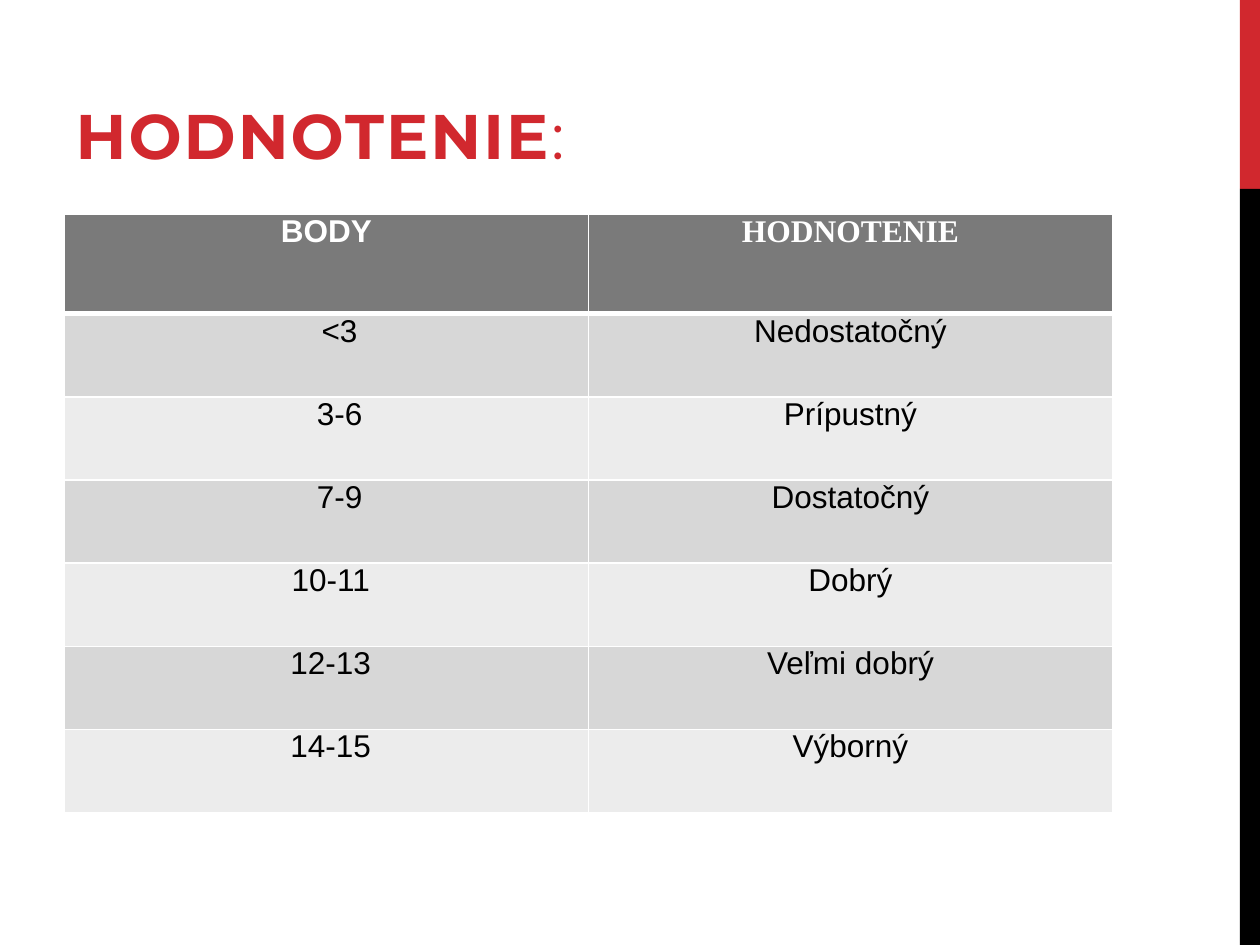
import pptx
import pptx.dml.color
import pptx.enum.shapes
import pptx.enum.text
import pptx.util
from dataclasses import dataclass
from lxml import etree
from pptx.util import Inches

ALIGN = pptx.enum.text.PP_ALIGN
ANCHOR = pptx.enum.text.MSO_ANCHOR
DRAWING = "{http://schemas.openxmlformats.org/drawingml/2006/main}"


@dataclass(frozen=True)
class Theme:
    red: str = "D1282E"
    black: str = "000000"
    white: str = "FFFFFF"
    header: str = "7A7A7A"
    bands: tuple = ("D7D7D7", "ECECEC")
    title_font: str = "Montserrat"
    body_font: str = "Arial"
    accent_font: str = "Times New Roman"
    title_size: int = 36
    body_size: int = 18


def rgb(value):
    return pptx.dml.color.RGBColor.from_string(value)


def add_text(para, text, *, font, size, color, bold=False, spacing=0):
    """Append a formatted span; spacing is in points."""
    span = para.add_run()
    span.text = text
    span.font.name = font
    span.font.size = pptx.util.Pt(size)
    span.font.bold = bold
    span.font.color.rgb = rgb(color)
    if spacing:
        span.font._element.set("spc", str(round(spacing * 100)))


def set_border(cell, side, color, width):
    properties = cell._tc.get_or_add_tcPr()
    line = etree.SubElement(properties, f"{DRAWING}ln{side}", w=str(pptx.util.Pt(width)))
    fill = etree.SubElement(line, f"{DRAWING}solidFill")
    etree.SubElement(fill, f"{DRAWING}srgbClr", val=color)


class SlideBuilder:
    def __init__(self, page, theme):
        self.page = page
        self.theme = theme

    def bar(self, left, top, width, height, color):
        box = self.page.shapes.add_shape(
            pptx.enum.shapes.MSO_SHAPE.RECTANGLE,
            Inches(left), Inches(top), Inches(width), Inches(height))
        box.shadow.inherit = False
        box.fill.solid()
        box.fill.fore_color.rgb = rgb(color)
        box.line.fill.background()

    def title(self, word, ending, left, top, width, height):
        box = self.page.shapes.title
        box.left, box.top = Inches(left), Inches(top)
        box.width, box.height = Inches(width), Inches(height)
        frame = box.text_frame
        frame.word_wrap = True
        frame.auto_size = pptx.enum.text.MSO_AUTO_SIZE.NONE
        frame.vertical_anchor = ANCHOR.BOTTOM
        para = frame.paragraphs[0]
        para.alignment = ALIGN.LEFT
        para.space_after = pptx.util.Pt(6)
        for text, bold in ((word, True), (ending, False)):
            add_text(para, text, font=self.theme.title_font, size=self.theme.title_size,
                     color=self.theme.red, bold=bold, spacing=1.2)

    def cell(self, cell, text, fill, borders, indent=0, **style):
        for side, width in borders.items():
            set_border(cell, side, self.theme.white, width)
        cell.fill.solid()
        cell.fill.fore_color.rgb = rgb(fill)
        cell.margin_left, cell.margin_right = Inches(0.07 + indent), Inches(0.07)
        cell.margin_top = cell.margin_bottom = 0
        cell.vertical_anchor = ANCHOR.TOP
        para = cell.text_frame.paragraphs[0]
        para.alignment = ALIGN.CENTER
        add_text(para, text, size=self.theme.body_size, **style)

    def grade_table(self, headings, grades, left, top, column_width, header_height, row_height):
        theme = self.theme
        row_count = len(grades) + 1
        table = self.page.shapes.add_table(
            row_count, 2, Inches(left), Inches(top), Inches(2 * column_width),
            Inches(header_height + len(grades) * row_height)).table
        for column in table.columns:
            column.width = Inches(column_width)
        for index, row in enumerate(table.rows):
            row.height = Inches(row_height if index else header_height)

        # Header row, closed by a thick rule
        fonts = (theme.body_font, theme.accent_font)
        for column, (text, font) in enumerate(zip(headings, fonts)):
            self.cell(table.cell(0, column), text, theme.header,
                      {"L": 1, "R": 1, "T": 1, "B": 3},
                      font=font, color=theme.white, bold=True)

        # Banded grade rows; the point ranges are nudged right
        for index, (points, grade, indent) in enumerate(grades):
            borders = {"L": 1, "R": 1, "T": 1 if index else 3, "B": 1}
            for column, (text, shift) in enumerate(((points, indent), (grade, 0))):
                self.cell(table.cell(index + 1, column), text, theme.bands[index % 2],
                          borders, shift, font=theme.body_font, color=theme.black)


def main():
    deck = pptx.Presentation()
    deck.slide_width, deck.slide_height = Inches(10), Inches(7.5)
    theme = Theme()
    builder = SlideBuilder(deck.slides.add_slide(deck.slide_layouts[5]), theme)

    # Side bars
    builder.bar(9.84, 0, 0.16, 1.5, theme.red)
    builder.bar(9.84, 1.5, 0.16, 6, theme.black)

    # Title and grading scale
    builder.title("HODNOTENIE", ":", 0.5, 0.25, 8.5, 1.17)
    grades = [
        ("<3", "Nedostatočný", 0.21),
        ("3-6", "Prípustný", 0.21),
        ("7-9", "Dostatočný", 0.21),
        ("10-11", "Dobrý", 0.07),
        ("12-13", "Veľmi dobrý", 0.07),
        ("14-15", "Výborný", 0.07),
    ]
    builder.grade_table(("BODY", "HODNOTENIE"), grades, left=0.51, top=1.7,
                        column_width=4.16, header_height=0.79, row_height=0.66)

    deck.save("out.pptx")


if __name__ == "__main__":
    main()
